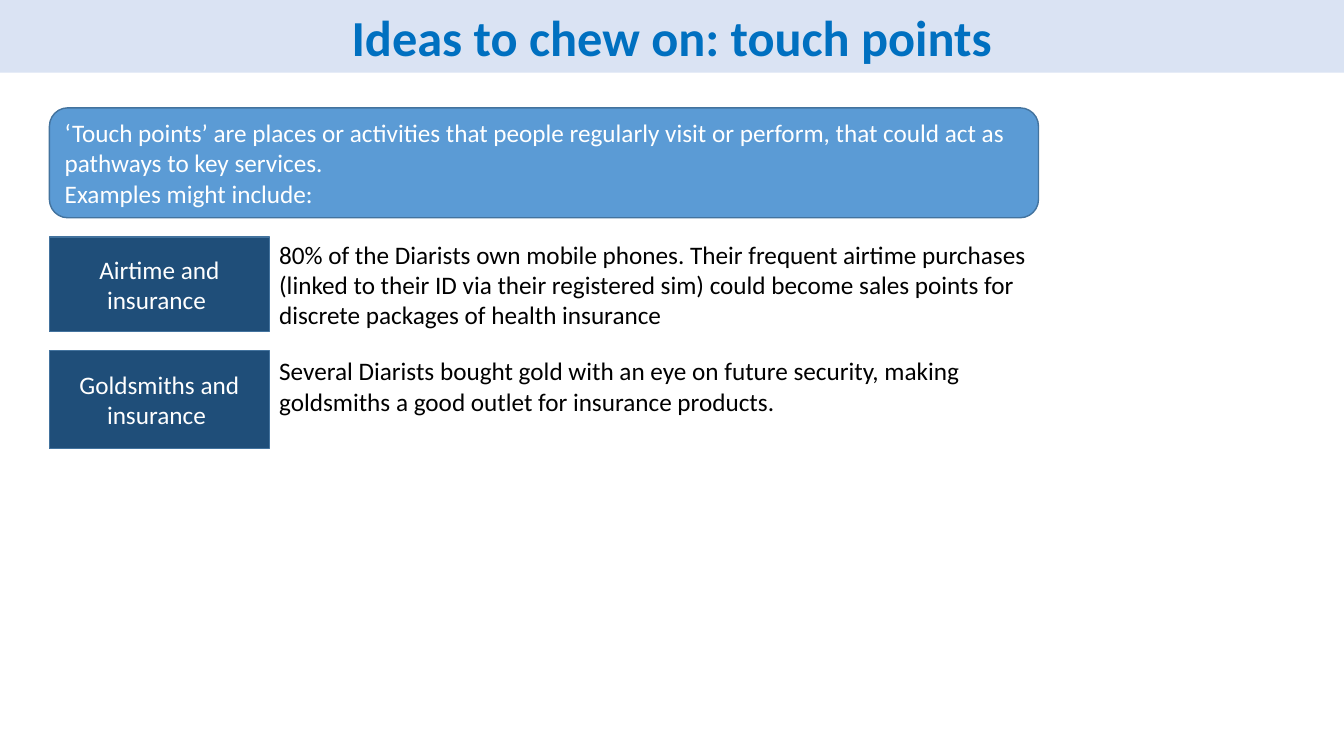
from pptx import Presentation
from pptx.dml.color import RGBColor
from pptx.enum.shapes import MSO_SHAPE
from pptx.enum.text import MSO_ANCHOR, PP_ALIGN
from pptx.util import Inches, Pt

ROUNDED, PROCESS = MSO_SHAPE.ROUNDED_RECTANGLE, MSO_SHAPE.FLOWCHART_PROCESS
LEFT, CENTER = PP_ALIGN.LEFT, PP_ALIGN.CENTER
MIDDLE, BOTTOM = MSO_ANCHOR.MIDDLE, MSO_ANCHOR.BOTTOM


def write(tf, lines, color, align=LEFT, size=18, bold=False):
    tf.word_wrap = True
    for i, line in enumerate(lines):
        p = tf.paragraphs[0] if i == 0 else tf.add_paragraph()
        p.alignment = align
        r = p.add_run()
        r.text = line
        r.font.name = "Calibri"
        r.font.size = Pt(size)
        r.font.bold = bold
        r.font.color.rgb = RGBColor.from_string(color)


def add_box(kind, x, y, w, h, fill, lines, align):
    sp = s.shapes.add_shape(kind, Inches(x), Inches(y), Inches(w), Inches(h))
    sp.shadow.inherit = False
    sp.fill.solid()
    sp.fill.fore_color.rgb = RGBColor.from_string(fill)
    sp.line.color.rgb = RGBColor.from_string("43739E")
    sp.line.width = Pt(1)
    sp.text_frame.vertical_anchor = MIDDLE
    write(sp.text_frame, lines, "FFFFFF", align)


prs = Presentation()
prs.slide_width, prs.slide_height = Inches(13.33), Inches(7.5)
s = prs.slides.add_slide(prs.slide_layouts[5])

# Title band
title = s.shapes.title
title.left, title.top = Inches(0), Inches(0)
title.width, title.height = prs.slide_width, Inches(0.72)
title.fill.solid()
title.fill.fore_color.rgb = RGBColor.from_string("DAE3F3")
title.text_frame.vertical_anchor = BOTTOM
write(title.text_frame, ["Ideas to chew on: touch points"], "0070C0", CENTER, 36, True)
title.text_frame.paragraphs[0].line_spacing = 0.9

# Definition of touch points
add_box(ROUNDED, 0.49, 1.07, 9.81, 1.09, "5B9BD5", [
    "‘Touch points’ are places or activities that people regularly visit or perform, "
    "that could act as pathways to key services.",
    "Examples might include:",
], LEFT)

# Examples: label box with its explanation to the right
examples = [
    ("Airtime and insurance ", 2.35, 0.94, 2.32, 1.01,
     "80% of the Diarists own mobile phones. Their frequent airtime purchases "
     "(linked to their ID via their registered sim) could become sales points for "
     "discrete packages of health insurance"),
    ("Goldsmiths and insurance ", 3.48, 0.97, 3.48, 0.71,
     "Several Diarists bought gold with an eye on future security, making "
     "goldsmiths a good outlet for insurance products."),
]
for label, box_y, box_h, text_y, text_h, text in examples:
    add_box(PROCESS, 0.49, box_y, 2.18, box_h, "1F4E79", [label], CENTER)
    tb = s.shapes.add_textbox(Inches(2.67), Inches(text_y), Inches(7.62), Inches(text_h))
    write(tb.text_frame, [text], "000000")

prs.save("out.pptx")
